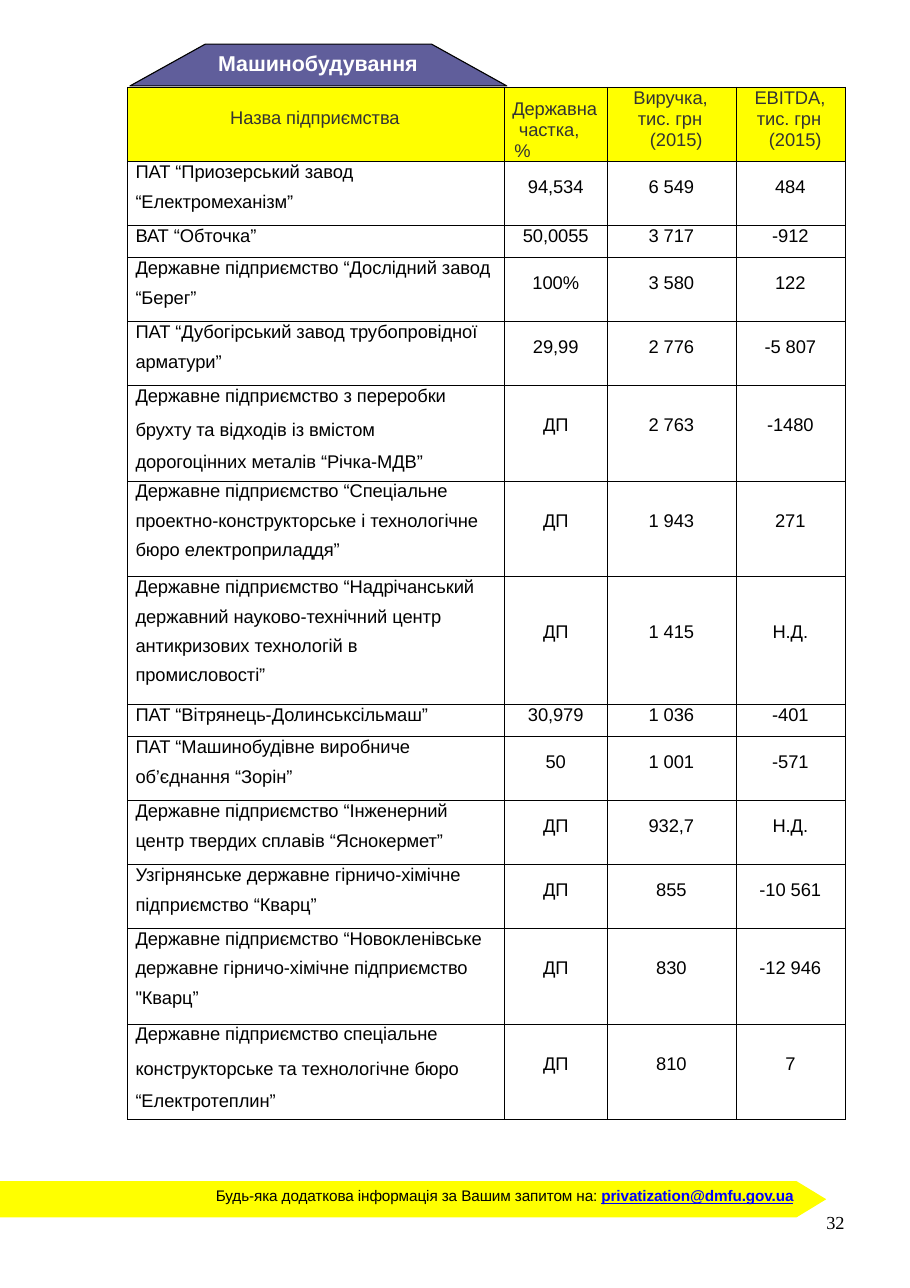
from dataclasses import dataclass

from lxml.etree import SubElement
from pptx import Presentation
from pptx.dml.color import RGBColor as RGB
from pptx.enum.shapes import MSO_SHAPE as SHAPE
from pptx.enum.text import MSO_ANCHOR as ANCHOR, MSO_AUTO_SIZE as AUTO, PP_ALIGN as ALIGN
from pptx.oxml.ns import qn
from pptx.util import Inches, Pt


@dataclass(frozen=True)
class Theme:
    font: str = "Arial"
    number_font: str = "Times New Roman"
    black: str = "000000"
    white: str = "FFFFFF"
    yellow: str = "FFFF00"
    violet: str = "605E9B"
    gray: str = "333333"
    blue: str = "0000FF"
    title: int = 14
    body: int = 12
    note: int = 10
    border: float = 0.48
    outline: float = 0.75
    tracking: int = -5


COLUMNS = [3.42, 0.93, 1.17, 0.99]
LINE_HEIGHT = 0.29
HEADER_HEIGHT = 0.67
NAME_INDENT = 0.07

HEADER = [
    (0.18, [("Назва підприємства", 0.93)]),
    (0.1, [("Державна", 0.07), ("частка,", 0.13), ("%", 0.09)]),
    (0, [("Виручка,", 0.24), ("тис. грн", 0.28), ("(2015)", 0.39)]),
    (0, [("EBITDA,", 0.17), ("тис. грн", 0.19), ("(2015)", 0.3)]),
]

PAIR = (None, 6.2)
LOOSE = (1.43, 0.1)
WIDE = (Pt(20.8), 1.6)

COMPANIES = [
    (["ПАТ “Приозерський завод", "“Електромеханізм”"], PAIR, "94,534", "6 549", "484"),
    (["ВАТ “Обточка”"], PAIR, "50,0055", "3 717", "-912"),
    (["Державне підприємство “Дослідний завод", "“Берег”"], PAIR, "100%", "3 580", "122"),
    (["ПАТ “Дубогірський завод трубопровідної", "арматури”"], PAIR, "29,99", "2 776", "-5 807"),
    (["Державне підприємство з переробки", "брухту та відходів із вмістом",
      "дорогоцінних металів “Річка-МДВ”"], WIDE, "ДП", "2 763", "-1480"),
    (["Державне підприємство “Спеціальне", "проектно-конструкторське і технологічне",
      "бюро електроприладдя”"], LOOSE, "ДП", "1 943", "271"),
    (["Державне підприємство “Надрічанський", "державний науково-технічний центр",
      "антикризових технологій в", "промисловості”"], LOOSE, "ДП", "1 415", "Н.Д."),
    (["ПАТ “Вітрянець-Долинськсільмаш”"], PAIR, "30,979", "1 036", "-401"),
    (["ПАТ “Машинобудівне виробниче", "об’єднання “Зорін”"], PAIR, "50", "1 001", "-571"),
    (["Державне підприємство “Інженерний", "центр твердих сплавів “Яснокермет”"],
     PAIR, "ДП", "932,7", "Н.Д."),
    (["Узгірнянське державне гірничо-хімічне", "підприємство “Кварц”"],
     PAIR, "ДП", "855", "-10 561"),
    (["Державне підприємство “Новокленівське", "державне гірничо-хімічне підприємство",
      "\"Кварц”"], LOOSE, "ДП", "830", "-12 946"),
    (["Державне підприємство спеціальне", "конструкторське та технологічне бюро",
      "“Електротеплин”"], WIDE, "ДП", "810", "7"),
]


class Deck:
    def __init__(self, theme, width, height):
        self.theme = theme
        self.prs = Presentation()
        self.prs.slide_width = Inches(width)
        self.prs.slide_height = Inches(height)
        self.slide = self.prs.slides.add_slide(self.prs.slide_layouts[5])

    def run(self, p, text, size=None, color=None, font=None, bold=False, underline=False):
        r = p.add_run()
        r.text = text
        f = r.font
        f.name = font or self.theme.font
        f.size = Pt(size or self.theme.body)
        f.bold = bold
        f.underline = underline
        f.color.rgb = RGB.from_string(color or self.theme.black)
        r._r.get_or_add_rPr().set("spc", str(self.theme.tracking))

    def paragraph(self, tf, first, indent=0, align=ALIGN.LEFT, line=None, before=0):
        p = tf.paragraphs[0] if first else tf.add_paragraph()
        p.alignment = align
        p.space_before = Pt(before)
        if line:
            p.line_spacing = line
        if indent:
            p._p.get_or_add_pPr().set("marL", str(Inches(indent)))
        return p

    def frame(self, tf):
        tf.margin_left = tf.margin_top = tf.margin_right = tf.margin_bottom = 0
        tf.word_wrap = True
        tf.auto_size = AUTO.NONE
        tf.vertical_anchor = ANCHOR.TOP
        return tf

    def shape(self, kind, box, adjust, fill, line=None):
        sp = self.slide.shapes.add_shape(kind, *map(Inches, box))
        sp.shadow.inherit = False
        sp.adjustments[0] = adjust
        sp.fill.solid()
        sp.fill.fore_color.rgb = RGB.from_string(fill)
        if line:
            sp.line.color.rgb = RGB.from_string(line)
            sp.line.width = Pt(self.theme.outline)
        else:
            sp.line.fill.background()

    def title(self, text, box):
        sp = self.slide.shapes.title
        sp.left, sp.top, sp.width, sp.height = map(Inches, box)
        p = self.paragraph(self.frame(sp.text_frame), True)
        self.run(p, text, self.theme.title, self.theme.white, bold=True)
        self.slide.shapes._spTree.append(sp._element)

    def text(self, box, runs, line=None):
        sp = self.slide.shapes.add_textbox(*map(Inches, box))
        p = self.paragraph(self.frame(sp.text_frame), True, line=line)
        for text, style in runs:
            self.run(p, text, **style)

    def cell(self, cell, top, fill=None):
        cell.margin_left = cell.margin_right = cell.margin_bottom = 0
        cell.margin_top = Inches(top)
        cell.vertical_anchor = ANCHOR.TOP
        tc_pr = cell._tc.get_or_add_tcPr()
        for side in ("a:lnL", "a:lnR", "a:lnT", "a:lnB"):
            ln = SubElement(tc_pr, qn(side), w=str(Pt(self.theme.border)))
            SubElement(SubElement(ln, qn("a:solidFill")), qn("a:srgbClr"), val=self.theme.black)
        if fill:
            cell.fill.solid()
            cell.fill.fore_color.rgb = RGB.from_string(fill)
        else:
            cell.fill.background()
        return cell.text_frame

    def header(self, table):
        for cell, (top, lines) in zip(table.rows[0].cells, HEADER):
            tf = self.cell(cell, top, self.theme.yellow)
            for i, (text, indent) in enumerate(lines):
                p = self.paragraph(tf, i == 0, indent, line=Pt(13.8))
                self.run(p, text, color=self.theme.gray)

    def company(self, row, lines, spacing, values):
        name_cell, *value_cells = row.cells
        tf = self.cell(name_cell, 0)
        self.run(self.paragraph(tf, True, NAME_INDENT, line=Pt(13.6)), lines[0])
        if lines[1:]:
            line, before = spacing
            p = self.paragraph(tf, False, NAME_INDENT, line=line, before=before)
            for i, text in enumerate(lines[1:]):
                if i:
                    p.add_line_break()
                self.run(p, text)
        for cell, value in zip(value_cells, values):
            tf = self.cell(cell, 0.27 * (len(lines) - 1) / 2)
            self.run(self.paragraph(tf, True, align=ALIGN.CENTER, line=Pt(13.6)), value)

    def table(self, left, top):
        heights = [HEADER_HEIGHT] + [LINE_HEIGHT * len(c[0]) for c in COMPANIES]
        box = (left, top, sum(COLUMNS), sum(heights))
        table = self.slide.shapes.add_table(
            len(heights), len(COLUMNS), *map(Inches, box)).table
        table.first_row = table.horz_banding = False
        for column, width in zip(table.columns, COLUMNS):
            column.width = Inches(width)
        for row, height in zip(table.rows, heights):
            row.height = Inches(height)
        self.header(table)
        for i, (lines, spacing, *values) in enumerate(COMPANIES, 1):
            self.company(table.rows[i], lines, spacing, values)


def main():
    theme = Theme()
    deck = Deck(theme, 8.26, 11.69)
    deck.shape(SHAPE.PENTAGON, (0, 10.72, 7.5, 0.33), 0.82, theme.yellow)
    deck.table(1.16, 0.79)
    deck.shape(SHAPE.TRAPEZOID, (1.18, 0.4, 3.42, 0.38), 1.8, theme.violet, theme.black)
    deck.title("Машинобудування", (1.98, 0.45, 1.95, 0.25))
    deck.text((1.96, 10.77, 5.33, 0.18), [
        ("Будь-яка додаткова інформація за Вашим запитом на: ", {"size": theme.note}),
        ("privatization@dmfu.gov.ua",
         {"size": theme.note, "color": theme.blue, "bold": True, "underline": True}),
    ])
    deck.text((7.5, 11, 0.22, 0.21), [("32", {"font": theme.number_font})], Pt(14.1))
    deck.prs.save("out.pptx")


if __name__ == "__main__":
    main()
